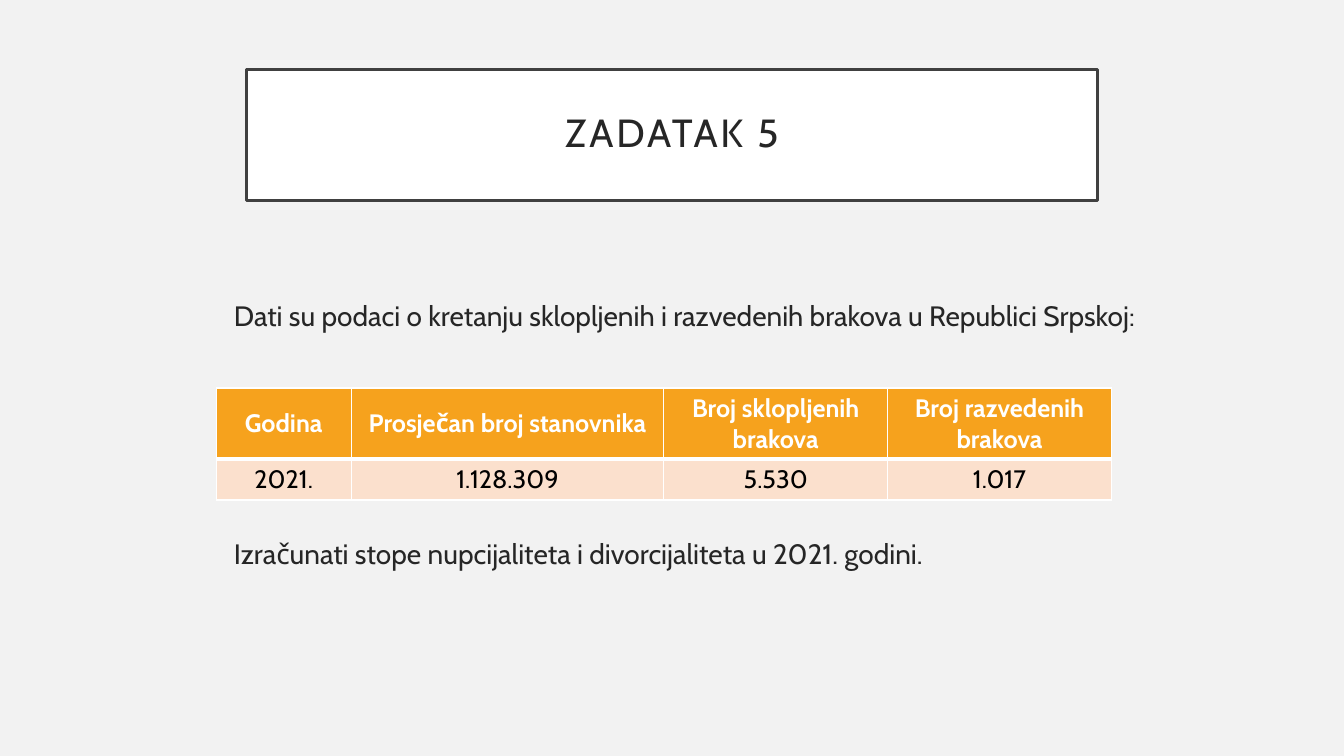
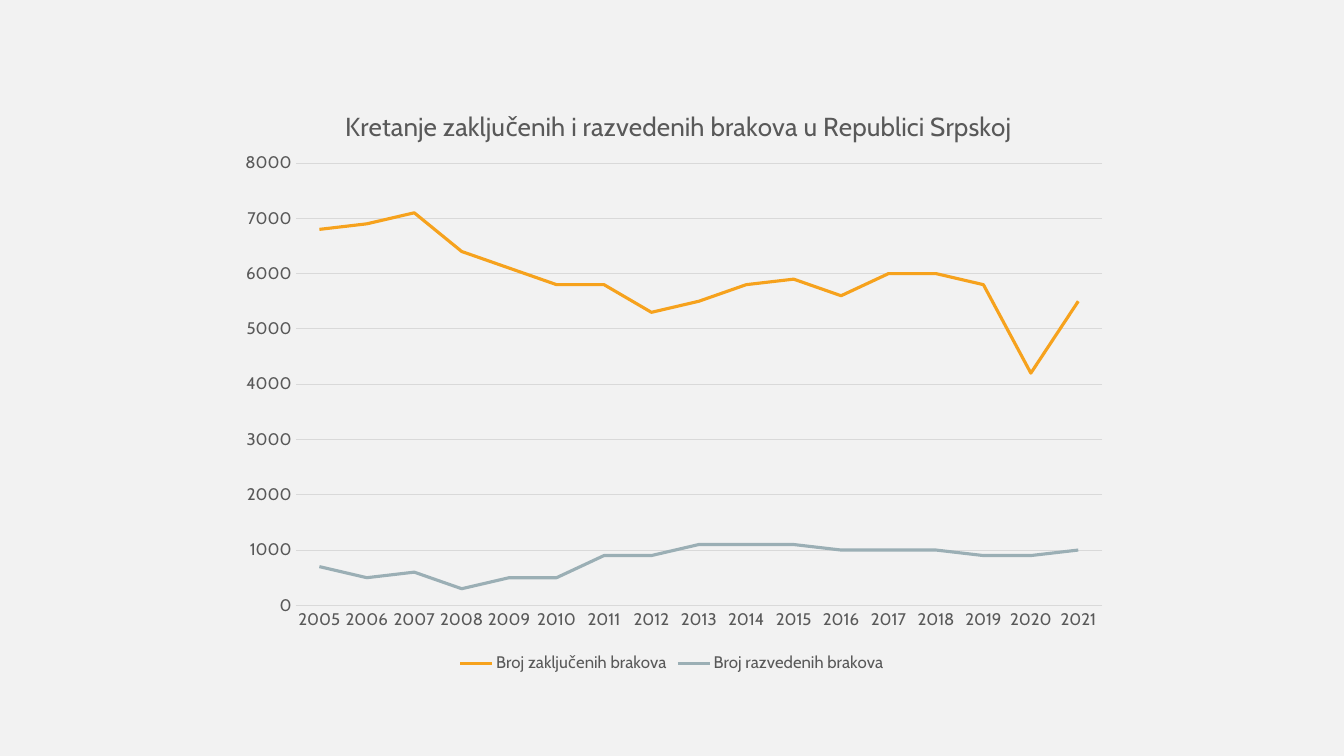
import dataclasses

import pptx
import pptx.chart.data
import pptx.dml.color
import pptx.enum.chart
import pptx.enum.text
import pptx.oxml
import pptx.oxml.ns
import pptx.util


@dataclasses.dataclass(frozen=True)
class Theme:
    """Hold the colours, type sizes and grid of the deck."""
    font: str = "Cabin"
    page: str = "F2F2F2"
    white: str = "FFFFFF"
    black: str = "000000"
    ink: str = "262626"
    frame: str = "404040"
    muted: str = "595959"
    rule: str = "D9D9D9"
    orange: str = "F6A21D"
    peach: str = "FBE0CD"
    steel: str = "9BAFB5"
    title_size: float = 28
    body_size: float = 20
    table_size: float = 18
    chart_title_size: float = 18.6
    chart_size: float = 12
    width: float = 13.33
    height: float = 7.5
    divisions: int = 12


THEME = Theme()
MIDDLE = pptx.enum.text.MSO_ANCHOR.MIDDLE
CENTER = pptx.enum.text.PP_ALIGN.CENTER

TABLE_ROWS = [
    ["Godina", "Prosječan broj stanovnika", "Broj sklopljenih brakova", "Broj razvedenih brakova"],
    ["2021.", "1.128.309", "5.530", "1.017"],
]
MARRIAGES = [6800, 6900, 7100, 6400, 6100, 5800, 5800, 5300, 5500,
             5800, 5900, 5600, 6000, 6000, 5800, 4200, 5500]
DIVORCES = [700, 500, 600, 300, 500, 500, 900, 900, 1100,
            1100, 1100, 1000, 1000, 1000, 900, 900, 1000]


def rgb(code):
    """Turn a hex code into a colour."""
    return pptx.dml.color.RGBColor.from_string(code)


def grid(left, top, columns, rows):
    """Turn columns and rows of the slide grid into a place and a size."""
    column = THEME.width / THEME.divisions
    row = THEME.height / THEME.divisions
    return [pptx.util.Inches(length) for length in
            (left * column, top * row, columns * column, rows * row)]


def assign(target, values):
    """Set each named attribute of an object."""
    for name, value in values.items():
        setattr(target, name, value)


def style_font(font, size, color, bold=False):
    """Give a font the deck's typeface with a size and a colour."""
    assign(font, {"name": THEME.font, "size": pptx.util.Pt(size), "bold": bold})
    font.color.rgb = rgb(color)


def style_fill(shape, color):
    """Fill a shape or a cell with one colour."""
    shape.fill.solid()
    shape.fill.fore_color.rgb = rgb(color)


def style_line(line, color, width):
    """Give a line a colour and a width in points."""
    line.color.rgb = rgb(color)
    line.width = pptx.util.Pt(width)


def write(para, text, size, color, bold=False):
    """Add a formatted run to a paragraph."""
    span = para.add_run()
    span.text = text
    style_font(span.font, size, color, bold)
    return span


def add_title(page, text, area):
    """Place the framed, letter-spaced title."""
    box = page.shapes.title
    assign(box, dict(zip(("left", "top", "width", "height"), area)))
    style_fill(box, THEME.white)
    style_line(box.line, THEME.frame, 2.5)
    margin = pptx.util.Inches(0.2)
    assign(box.text_frame, {
        "auto_size": pptx.enum.text.MSO_AUTO_SIZE.NONE, "word_wrap": True,
        "vertical_anchor": MIDDLE, "margin_left": margin, "margin_right": margin,
        "margin_top": margin, "margin_bottom": margin,
    })
    para = box.text_frame.paragraphs[0]
    assign(para, {"alignment": CENTER, "line_spacing": 0.9})
    span = write(para, text, THEME.title_size, THEME.ink)
    span.font._element.set("spc", "200")


def add_body(page, texts, gap, area):
    """Place paragraphs with a gap in points between them."""
    frame = page.shapes.add_textbox(*area).text_frame
    frame.word_wrap = True
    for index, text in enumerate(texts):
        para = frame.add_paragraph() if index else frame.paragraphs[0]
        para.space_before = pptx.util.Pt(gap if index else 0)
        write(para, text, THEME.body_size, THEME.ink)


def set_borders(cell, widths):
    """Draw white cell borders, given as widths in points by side."""
    properties = cell._tc.get_or_add_tcPr()
    for index, (side, width) in enumerate(widths.items()):
        border = pptx.oxml.parse_xml(
            f'<a:{side} {pptx.oxml.ns.nsdecls("a")} w="{pptx.util.Pt(width)}">'
            f'<a:solidFill><a:srgbClr val="{THEME.white}"/></a:solidFill></a:{side}>')
        properties.insert(index, border)


def add_data_table(page, rows, widths, heights, area):
    """Place a table with a coloured header row."""
    table = page.shapes.add_table(len(rows), len(widths), *area).table
    table.horz_banding = False
    for column, width in zip(table.columns, widths):
        column.width = pptx.util.Inches(width)
    for row, height in zip(table.rows, heights):
        row.height = pptx.util.Inches(height)
    for row_index, texts in enumerate(rows):
        header = row_index == 0
        for column_index, text in enumerate(texts):
            cell = table.cell(row_index, column_index)
            style_fill(cell, THEME.orange if header else THEME.peach)
            cell.vertical_anchor = MIDDLE
            para = cell.text_frame.paragraphs[0]
            para.alignment = CENTER
            write(para, text, THEME.table_size, THEME.white if header else THEME.black, header)
            set_borders(cell, {"lnL": 1, "lnR": 1, "lnT": 1 if header else 3,
                               "lnB": 3 if header else 1})


def set_layout(element, index, shares, inner=False):
    """Fix a chart part at shares of the chart's size."""
    for old in element.findall(pptx.oxml.ns.qn("c:layout")):
        element.remove(old)
    target = '<c:layoutTarget val="inner"/>' if inner else ""
    modes = "".join(f'<c:{axis}Mode val="edge"/>' for axis in "xy")
    values = "".join(f'<c:{name} val="{share}"/>' for name, share in shares.items())
    element.insert(index, pptx.oxml.parse_xml(
        f'<c:layout {pptx.oxml.ns.nsdecls("c")}><c:manualLayout>'
        f'{target}{modes}{values}</c:manualLayout></c:layout>'))


def style_axes(chart):
    """Format the axes and the gridlines."""
    for axis in (chart.category_axis, chart.value_axis):
        assign(axis, {"major_tick_mark": pptx.enum.chart.XL_TICK_MARK.NONE,
                      "minor_tick_mark": pptx.enum.chart.XL_TICK_MARK.NONE})
        style_font(axis.tick_labels.font, THEME.chart_size, THEME.muted)
    style_line(chart.category_axis.format.line, THEME.rule, 0.75)
    assign(chart.value_axis, {"minimum_scale": 0, "maximum_scale": 8000, "major_unit": 1000})
    chart.value_axis.format.line.fill.background()
    style_line(chart.value_axis.major_gridlines.format.line, THEME.rule, 0.75)


def add_line_chart(page, title, years, series, area):
    """Place a line chart from (name, values, colour) series."""
    data = pptx.chart.data.CategoryChartData()
    data.categories = [str(year) for year in years]
    for name, values, _ in series:
        data.add_series(name, values)
    chart = page.shapes.add_chart(pptx.enum.chart.XL_CHART_TYPE.LINE, *area, data).chart
    style_font(chart.font, THEME.chart_size, THEME.muted)
    write(chart.chart_title.text_frame.paragraphs[0], title,
          THEME.chart_title_size, THEME.muted)
    chart.chart_title.include_in_layout = False
    set_layout(chart.chart_title._element, 1, {"x": 0.13, "y": 0.04})
    plot = chart.plots[0]
    plot.vary_by_categories = False
    set_layout(plot._element.getparent(), 0,
               {"x": 0.08, "y": 0.14, "w": 0.9, "h": 0.74}, inner=True)
    for line, (_, _, color) in zip(plot.series, series):
        line.smooth = False
        style_line(line.format.line, color, 2.25)
    style_axes(chart)
    chart.has_legend = True
    assign(chart.legend, {"position": pptx.enum.chart.XL_LEGEND_POSITION.BOTTOM,
                          "include_in_layout": False})
    style_font(chart.legend.font, THEME.chart_size, THEME.muted)


def build_task(deck):
    """Build the slide with the task and its data."""
    page = deck.slides.add_slide(deck.slide_layouts[5])
    add_title(page, "ZADATAK 5", grid(2.2, 1.1, 7.6, 2.08))
    add_body(page, [
        "Dati su podaci o kretanju sklopljenih i razvedenih brakova u Republici Srpskoj:",
        "Izračunati stope nupcijaliteta i divorcijaliteta u 2021. godini.",
    ], 146, grid(2, 4.66, 8.33, 5.94))
    add_data_table(page, TABLE_ROWS, [1.34, 3.1, 2.22, 2.22], [0.7, 0.41],
                   grid(1.93, 6.16, 8, 1.78))


def build_trend(deck):
    """Build the slide with the chart of marriages and divorces."""
    page = deck.slides.add_slide(deck.slide_layouts[6])
    add_line_chart(page, "Kretanje zaključenih i razvedenih brakova u Republici Srpskoj",
                   range(2005, 2022), [
                       ("Broj zaključenih brakova", MARRIAGES, THEME.orange),
                       ("Broj razvedenih brakova", DIVORCES, THEME.steel),
                   ], grid(2, 1.26, 8, 9.49))


def main():
    """Build and save the deck."""
    deck = pptx.Presentation()
    assign(deck, {"slide_width": pptx.util.Inches(THEME.width),
                  "slide_height": pptx.util.Inches(THEME.height)})
    style_fill(deck.slide_master.background, THEME.page)
    build_task(deck)
    build_trend(deck)
    deck.save("out.pptx")


if __name__ == "__main__":
    main()
